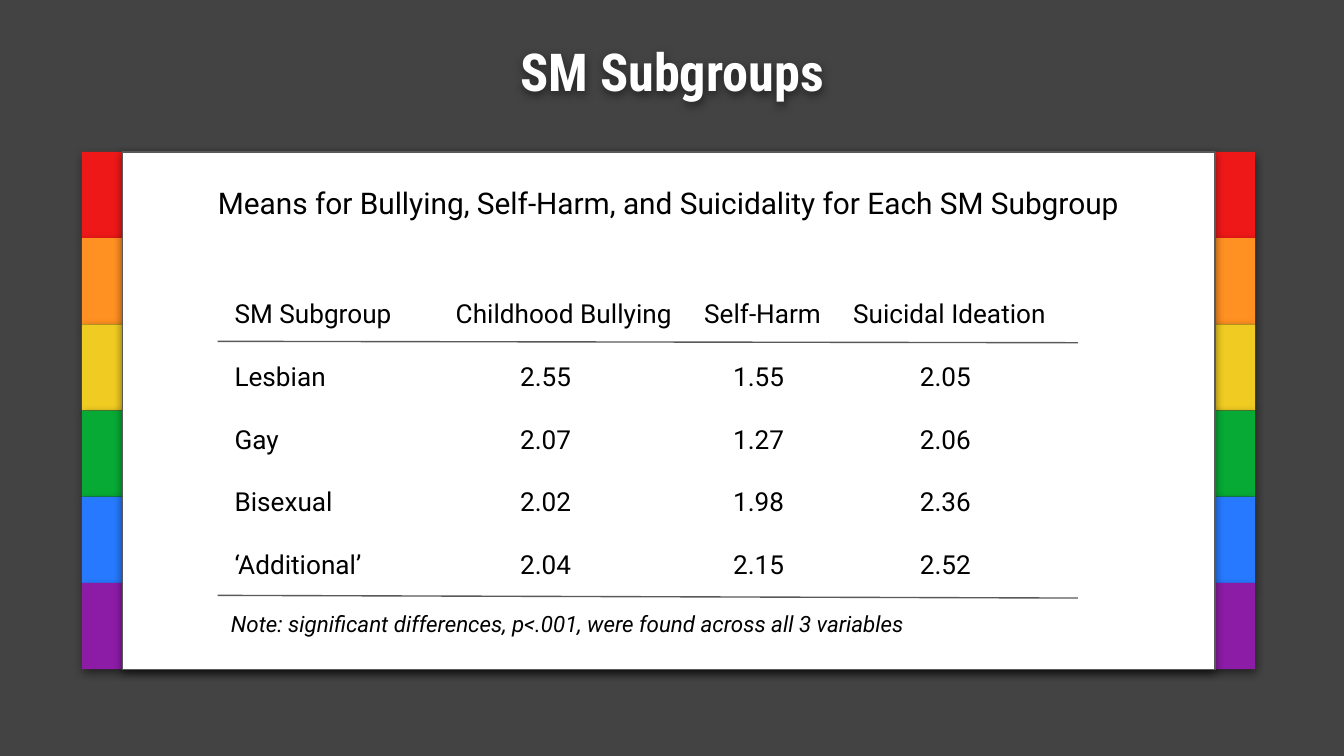
"""Build the slide of subgroup means on a rainbow-edged card."""
import pptx
import pptx.dml.color
import pptx.enum.shapes
import pptx.enum.text
import pptx.oxml
import pptx.oxml.ns
import pptx.util
from pptx.util import Inches

HUES = {
    "back": "434343", "white": "FFFFFF", "black": "000000", "rule": "595959",
    "red": "EF1818", "orange": "FF9022", "yellow": "F0CC22",
    "green": "07AA35", "blue": "277AFF", "purple": "8C1CA6",
}
RGB = {name: pptx.dml.color.RGBColor.from_string(hue) for name, hue in HUES.items()}
ALIGN = pptx.enum.text.PP_ALIGN
ANCHOR = pptx.enum.text.MSO_ANCHOR
RECT = pptx.enum.shapes.MSO_SHAPE.RECTANGLE
LINE = pptx.enum.shapes.MSO_CONNECTOR.STRAIGHT
SHADOW = (
    f'<a:outerShdw {pptx.oxml.ns.nsdecls("a")} blurRad="57150" dist="19050" '
    'dir="5400000" algn="bl" rotWithShape="0"><a:srgbClr val="000000">'
    '<a:alpha val="50000"/></a:srgbClr></a:outerShdw>'
)


def shade(shape):
    shape.shadow.inherit = False
    effect = shape._element.spPr.find(pptx.oxml.ns.qn("a:effectLst"))
    effect.append(pptx.oxml.parse_xml(SHADOW))


def write(frame, text, size, align, hue="black", face="Roboto"):
    frame.text = text
    frame.word_wrap = True
    par = frame.paragraphs[0]
    par.alignment = align
    font = par.runs[0].font
    font.name = face
    font.size = pptx.util.Pt(size)
    font.color.rgb = RGB[hue]
    return font


deck = pptx.Presentation()
deck.slide_width = Inches(10)
deck.slide_height = deck.slide_width * 9 // 16
slide = deck.slides.add_slide(deck.slide_layouts[6])
slide.background.fill.solid()
slide.background.fill.fore_color.rgb = RGB["back"]
shapes = slide.shapes

left, top, width, height = 0.91, 1.13, 8.13, 3.85
bands = ["red", "orange", "yellow", "green", "blue", "purple"]
step = height / len(bands)
for i, hue in enumerate(bands):
    band = shapes.add_shape(
        RECT, Inches(0.61), Inches(top + i * step), Inches(8.73), Inches(step))
    band.fill.solid()
    band.fill.fore_color.rgb = RGB[hue]
    band.line.fill.background()
    shade(band)

card = shapes.add_shape(RECT, Inches(left), Inches(top), Inches(width), Inches(height))
card.fill.solid()
card.fill.fore_color.rgb = RGB["white"]
card.line.color.rgb = RGB["rule"]
card.line.width = pptx.util.Pt(0.75)
shade(card)

labels = [
    ("SM Subgroups", 28, ALIGN.CENTER, "white", "Roboto Condensed",
     ANCHOR.TOP, (0.5, 0.19, 9, 0.63)),
    ("Means for Bullying, Self-Harm, and Suicidality for Each SM Subgroup", 16,
     ALIGN.CENTER, "black", "Roboto", ANCHOR.MIDDLE, (left, 1.12, width, 0.77)),
    ("Note: significant differences, p<.001, were found across all 3 variables", 12,
     ALIGN.LEFT, "black", "Roboto", ANCHOR.TOP, (1.62, 4.44, 5.82, 0.4)),
]
for text, size, align, hue, face, anchor, place in labels:
    box = shapes.add_textbox(*map(Inches, place))
    frame = box.text_frame
    frame.margin_left = frame.margin_right = Inches(0.1)
    frame.margin_top = frame.margin_bottom = Inches(0.1)
    frame.vertical_anchor = anchor
    font = write(frame, text, size, align, hue, face)
    font.bold = size == 28
    font.italic = size == 12
    if font.bold:
        shade(box)

rows = [
    ("SM Subgroup", "Childhood Bullying", "Self-Harm", "Suicidal Ideation"),
    ("Lesbian", "2.55", "1.55", "2.05"),
    ("Gay", "2.07", "1.27", "2.06"),
    ("Bisexual", "2.02", "1.98", "2.36"),
    ("‘Additional’", "2.04", "2.15", "2.52"),
]
cols = [1.66, 1.78, 1.18, 1.6]
shifts = [0, 0.27, 0.06, 0.06]
tall = 2.33
table = shapes.add_table(
    len(rows), len(cols), Inches(1.645), Inches(2.11),
    Inches(sum(cols)), Inches(tall)).table
table.first_row = table.horz_banding = False
for col, wide in zip(table.columns, cols):
    col.width = Inches(wide)
for r, row in enumerate(rows):
    table.rows[r].height = Inches(tall / len(rows))
    for c, text in enumerate(row):
        cell = table.cell(r, c)
        cell.fill.solid()
        cell.fill.fore_color.rgb = RGB["white"]
        cell.vertical_anchor = ANCHOR.MIDDLE
        cell.margin_left = Inches(0 if c else 0.1)
        cell.margin_right = Inches(shifts[c] if r else 0)
        write(cell.text_frame, text, 14, ALIGN.CENTER if c else ALIGN.LEFT)

for start, end in [(2.54, 2.55), (4.43, 4.45)]:
    rule = shapes.add_connector(
        LINE, Inches(1.62), Inches(start), Inches(8.02), Inches(end))
    rule.line.color.rgb = RGB["rule"]
    rule.line.width = pptx.util.Pt(0.75)
    rule._element.spPr.append(pptx.oxml.parse_xml(
        f'<a:effectLst {pptx.oxml.ns.nsdecls("a")}/>'))

deck.save("out.pptx")
